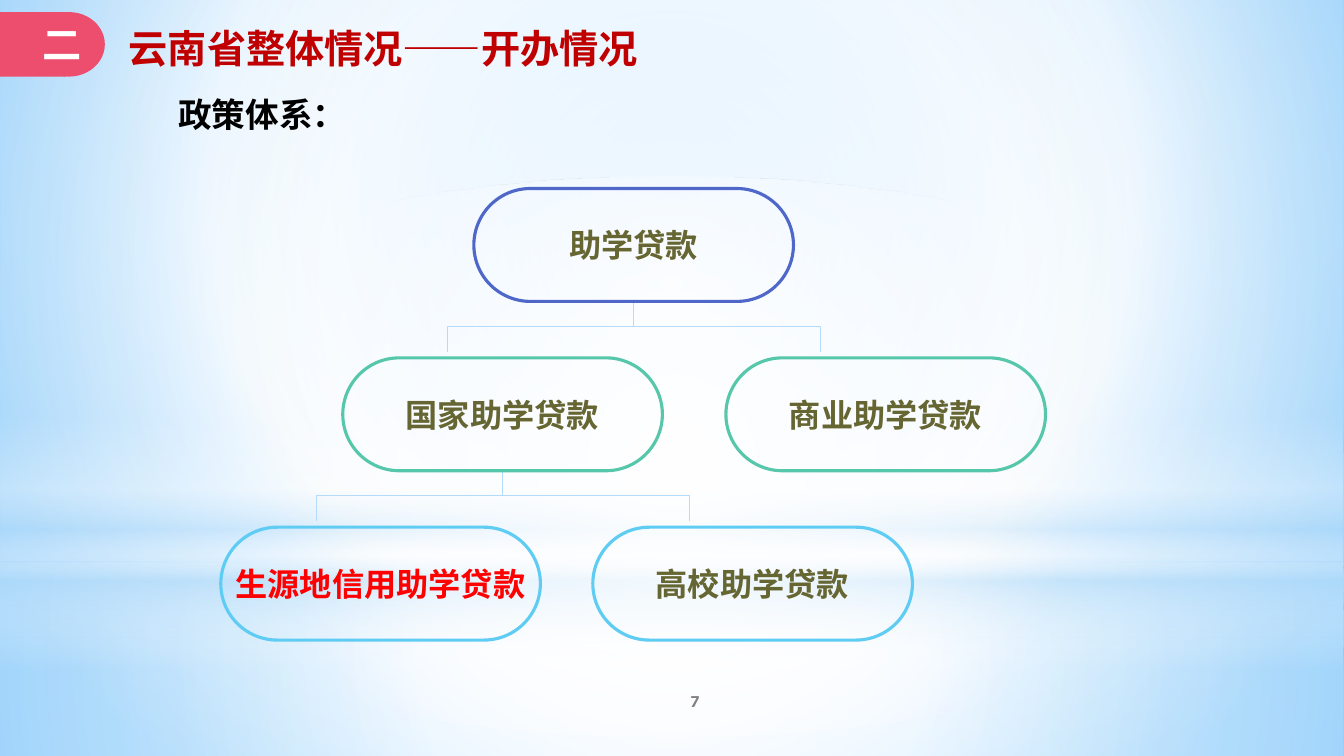
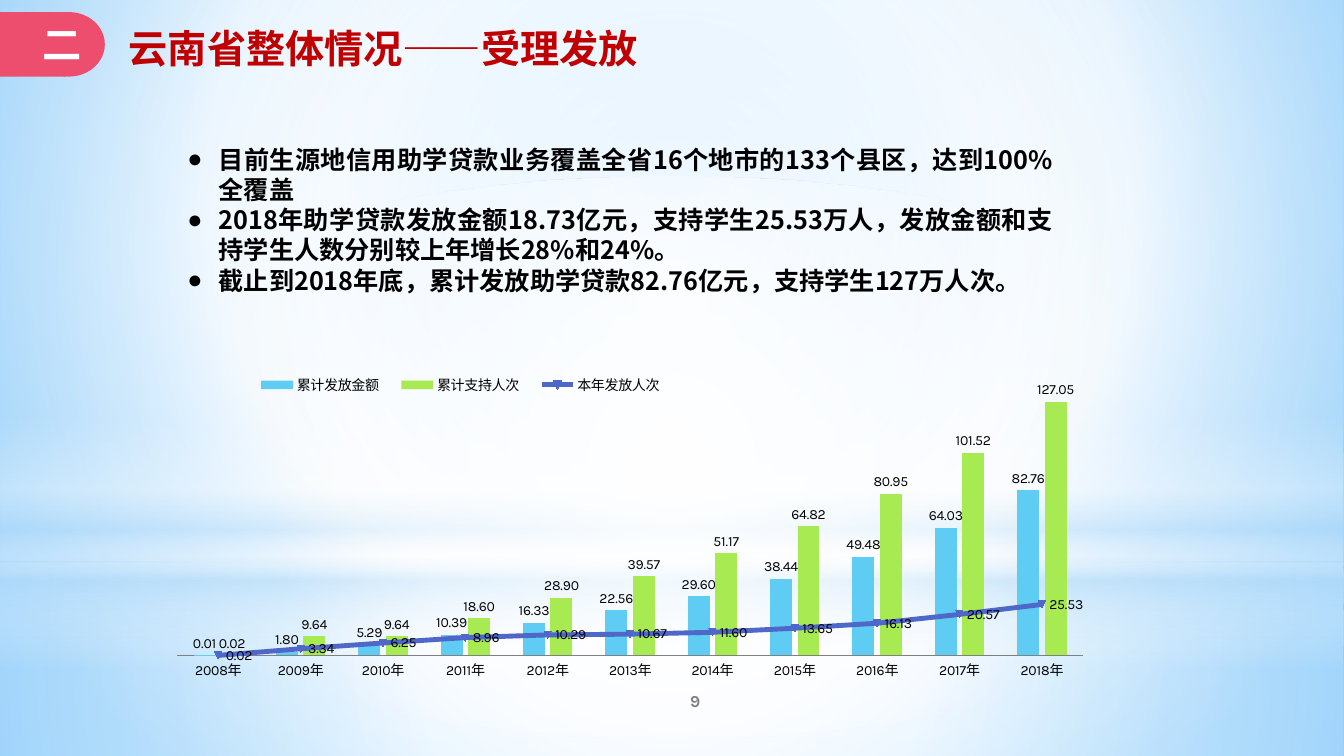
"""Build two slides on student loans in Yunnan: the policy tree and the yearly lending chart."""
import pptx
import pptx.chart.data
import pptx.dml.color
import pptx.enum.chart
import pptx.enum.shapes
import pptx.enum.text
import pptx.oxml
import pptx.oxml.ns
import pptx.util
from lxml import etree

Inches, Pt = pptx.util.Inches, pptx.util.Pt
RGBColor = pptx.dml.color.RGBColor
qn = pptx.oxml.ns.qn
SHAPE = pptx.enum.shapes.MSO_SHAPE
ALIGN = pptx.enum.text.PP_ALIGN
MIDDLE = pptx.enum.text.MSO_ANCHOR.MIDDLE
LABEL = pptx.enum.chart.XL_LABEL_POSITION

CJK = "Noto Sans CJK SC"
COLORS = {
    "white": "FFFFFF", "black": "000000", "grey": "808080", "mist": "B4DCFA",
    "sky": "9ED5FF", "deep_sky": "5BB9FF", "badge": "ED4E6E", "title": "C00000",
    "olive": "666633", "red": "FF0000", "indigo": "4E67C8", "teal": "56C7AA",
    "cyan": "5ECCF3", "lime": "A7EA52",
}
RGB = {name: RGBColor.from_string(value) for name, value in COLORS.items()}


def paint_gradient(holder, element, stops, focus=None):
    """Fill with (position, colour, opacity) stops, around a focus or from top to bottom."""
    holder.fill.gradient()
    gradient = element.find(".//" + qn("a:gradFill"))
    for child in list(gradient):
        gradient.remove(child)
    stop_list = etree.SubElement(gradient, qn("a:gsLst"))
    for position, color, opacity in stops:
        stop = etree.SubElement(stop_list, qn("a:gs"), pos=str(position * 1000))
        tint = etree.SubElement(stop, qn("a:srgbClr"), val=COLORS[color])
        if opacity < 100:
            etree.SubElement(tint, qn("a:alpha"), val=str(opacity * 1000))
    if focus:
        circle = etree.SubElement(gradient, qn("a:path"))
        circle.set("path", "circle")
        edges = {side: str(value * 1000) for side, value in zip("ltrb", focus)}
        etree.SubElement(circle, qn("a:fillToRect"), edges)
    else:
        etree.SubElement(gradient, qn("a:lin"), ang="5400000", scaled="0")


def write_text(frame, lines, size, color, font=CJK, align=ALIGN.LEFT, wrap=True):
    """Write bold paragraphs in one format and return them."""
    frame.word_wrap = wrap
    look = {"size": Pt(size), "bold": True, "name": font}
    for number, line in enumerate(lines):
        paragraph = frame.add_paragraph() if number else frame.paragraphs[0]
        paragraph.alignment = align
        run = paragraph.add_run()
        run.text = line
        for attribute, value in look.items():
            setattr(run.font, attribute, value)
        run.font.color.rgb = RGB[color]
        etree.SubElement(run.font._element, qn("a:ea"), typeface=CJK)
    return frame.paragraphs


CENTER = (50, 50, 50, 50)
BACKDROP = [(0, "sky", 100), (60, "white", 100), (100, "deep_sky", 100)]
GLOWS = [
    (SHAPE.RECTANGLE, 5.58, 1.92,
     [(0, "white", 91), (37, "white", 76), (100, "mist", 79)], CENTER),
    (SHAPE.RECTANGLE, 0, 5.58,
     [(0, "white", 89), (48, "white", 62), (100, "mist", 79)], CENTER),
    (SHAPE.RECTANGLE, 4.12, 2.5,
     [(0, "white", 0), (29, "white", 30), (45, "mist", 40),
      (55, "white", 26), (65, "mist", 60), (100, "white", 0)], None),
    (SHAPE.OVAL, 1.75, 5.58, [(0, "white", 100), (56, "white", 0)], CENTER),
]
BADGE = [(SHAPE.RECTANGLE, -0.01, 0.67), (SHAPE.OVAL, 0.33, 0.71)]

prs = pptx.Presentation()
prs.slide_width, prs.slide_height = Inches(13.33), Inches(7.5)
slides = []
for title, page in [("云南省整体情况——开办情况", "7"), ("云南省整体情况——受理发放", "9")]:
    slide = prs.slides.add_slide(prs.slide_layouts[6])
    slides.append(slide)
    paint_gradient(slide.background, slide._element, BACKDROP, (20, 10, 20, 60))
    for outline, top, height, stops, focus in GLOWS:
        glow = slide.shapes.add_shape(outline, 0, Inches(top), Inches(13.33), Inches(height))
        glow.shadow.inherit = False
        glow.line.fill.background()
        paint_gradient(glow, glow._element, stops, focus)
    for outline, left, width in BADGE:
        badge = slide.shapes.add_shape(
            outline, Inches(left), Inches(0.12), Inches(width), Inches(0.64))
        badge.shadow.inherit = False
        badge.fill.solid()
        badge.fill.fore_color.rgb = RGB["badge"]
        badge.line.fill.background()
    section = slide.shapes.add_textbox(Inches(0.32), Inches(0.15), Inches(0.59), Inches(0.57))
    write_text(section.text_frame, ["二"], 28, "white", wrap=False)
    heading = slide.shapes.add_textbox(Inches(1.18), Inches(0.19), Inches(5.93), Inches(0.57))
    write_text(heading.text_frame, [title], 28, "title")
    footer = slide.shapes.add_textbox(Inches(5.56), Inches(6.75), Inches(2.67), Inches(0.4))
    footer.text_frame.vertical_anchor = MIDDLE
    write_text(footer.text_frame, [page], 12, "grey", "Karla", ALIGN.CENTER)

policy, lending = slides

subtitle = policy.shapes.add_textbox(Inches(1.67), Inches(0.8), Inches(9.33), Inches(0.7))
write_text(subtitle.text_frame, ["政策体系："], 24, "black")[0].line_spacing = 1.2

LOAN_WIDTH, LOAN_HEIGHT, LEVEL_TOP, LEVEL_STEP = 3.17, 1.12, 1.87, 1.68
DROP, BRANCH_SPAN = 0.5, 1.85
for parent_level, parent_left in enumerate([4.7, 3.4]):
    parent_x = parent_left + LOAN_WIDTH / 2
    drop_middle = LEVEL_TOP + parent_level * LEVEL_STEP + LOAN_HEIGHT + DROP / 2
    for side, turn in [(-1, 270), (1, 90)]:
        middle_x = parent_x + side * BRANCH_SPAN / 2
        branch = policy.shapes.add_connector(
            pptx.enum.shapes.MSO_CONNECTOR.ELBOW,
            Inches(middle_x + side * DROP / 2), Inches(drop_middle - BRANCH_SPAN / 2),
            Inches(middle_x - side * DROP / 2), Inches(drop_middle + BRANCH_SPAN / 2))
        branch._element.spPr.find(qn("a:xfrm")).set("rot", str(turn * 60000))
        branch.line.color.rgb = RGB["mist"]
        branch.line.width = Pt(0.75)
        etree.SubElement(branch._element.spPr, qn("a:effectLst"))

LOANS = [
    (0, 4.7, "助学贷款", "indigo", "olive"),
    (1, 3.4, "国家助学贷款", "teal", "olive"),
    (1, 7.2, "商业助学贷款", "teal", "olive"),
    (2, 2.19, "生源地信用助学贷款", "cyan", "red"),
    (2, 5.88, "高校助学贷款", "cyan", "olive"),
]
for level, left, name, edge, ink in LOANS:
    loan = policy.shapes.add_shape(
        SHAPE.ROUNDED_RECTANGLE, Inches(left), Inches(LEVEL_TOP + level * LEVEL_STEP),
        Inches(LOAN_WIDTH), Inches(LOAN_HEIGHT))
    loan.adjustments[0] = 0.5
    loan.shadow.inherit = False
    loan.fill.background()
    loan.line.color.rgb = RGB[edge]
    loan.line.width = Pt(2.25)
    frame = loan.text_frame
    frame.vertical_anchor = MIDDLE
    for margin in ("left", "top", "right", "bottom"):
        setattr(frame, "margin_" + margin, 0)
    write_text(frame, [name], 23, ink, "Arial", ALIGN.CENTER, wrap=False)

FACTS = [
    "目前生源地信用助学贷款业务覆盖全省16个地市的133个县区，达到100%全覆盖",
    "2018年助学贷款发放金额18.73亿元，支持学生25.53万人，发放金额和支持学生人数分别较上年增长28%和24%。",
    "截止到2018年底，累计发放助学贷款82.76亿元，支持学生127万人次。",
]
facts = lending.shapes.add_textbox(Inches(1.76), Inches(1.38), Inches(8.78), Inches(1.9))
for fact in write_text(facts.text_frame, FACTS, 18, "black", align=ALIGN.JUSTIFY):
    fact.line_spacing = Pt(21.6)
    indent = fact._p.get_or_add_pPr()
    indent.set("marL", str(Inches(0.31)))
    indent.set("indent", str(-Inches(0.31)))
    etree.SubElement(indent, qn("a:buFont"), typeface="Arial")
    etree.SubElement(indent, qn("a:buChar"), char="●")

SERIES = [
    ("累计发放金额", "cyan",
     [0.01, 1.8, 5.29, 10.39, 16.33, 22.56, 29.6, 38.44, 49.48, 64.03, 82.76]),
    ("累计支持人次", "lime",
     [0.02, 9.64, 9.64, 18.6, 28.9, 39.57, 51.17, 64.82, 80.95, 101.52, 127.05]),
    ("本年发放人次", "indigo",
     [0.02, 3.34, 6.25, 8.96, 10.29, 10.67, 11.6, 13.65, 16.13, 20.57, 25.53]),
]
figures = pptx.chart.data.CategoryChartData(number_format="0.00")
figures.categories = [f"{year}年" for year in range(2008, 2019)]
for name, color, values in SERIES:
    figures.add_series(name, values)
chart = lending.shapes.add_chart(
    pptx.enum.chart.XL_CHART_TYPE.COLUMN_CLUSTERED,
    Inches(1.57), Inches(3.31), Inches(9.36), Inches(3.51), figures).chart
chart.has_title = False
chart.font.size, chart.font.name = Pt(10), "Karla"
chart.font.color.rgb = RGB["black"]

bars = chart._chartSpace.find(".//" + qn("c:barChart"))
line_chart = pptx.oxml.parse_xml(
    f'<c:lineChart {pptx.oxml.ns.nsdecls("c")}><c:grouping val="standard"/>'
    '<c:varyColors val="0"/><c:marker val="1"/></c:lineChart>')
yearly = bars.findall(qn("c:ser"))[2]
for bar_only in yearly.findall(qn("c:invertIfNegative")):
    yearly.remove(bar_only)
line_chart.insert(2, yearly)
for axis in bars.findall(qn("c:axId")):
    etree.SubElement(line_chart, qn("c:axId"), val=axis.get("val"))
bars.addnext(line_chart)

columns, trend = chart.plots
columns.vary_by_categories = False
columns.gap_width, columns.overlap = 150, -25
for series, (name, color, values) in zip([*columns.series, *trend.series], SERIES):
    is_trend = color == "indigo"
    labels = series.data_labels
    label_format = {
        "show_value": True, "number_format": "0.00", "number_format_is_linked": False,
        "position": LABEL.RIGHT if is_trend else LABEL.OUTSIDE_END,
    }
    for attribute, value in label_format.items():
        setattr(labels, attribute, value)
    fill = series.marker.format.fill if is_trend else series.format.fill
    fill.solid()
    fill.fore_color.rgb = RGB[color]
    if is_trend:
        series.smooth = False
        series.format.line.color.rgb = RGB[color]
        series.format.line.width = Pt(3.5)
        series.marker.format.line.color.rgb = RGB[color]

amounts, years = chart.value_axis, chart.category_axis
amounts.visible = amounts.has_major_gridlines = False
amounts.minimum_scale, amounts.maximum_scale = 0, 140
years.major_tick_mark = pptx.enum.chart.XL_TICK_MARK.NONE
years.format.line.color.rgb = RGB["grey"]
chart.has_legend = True
chart.legend.position = pptx.enum.chart.XL_LEGEND_POSITION.TOP
chart.legend.include_in_layout = True

plot_area = chart._chartSpace.find(".//" + qn("c:plotArea"))
PLACES = [(plot_area, 0, "inner", (0.02, 0.12, 0.96, 0.79)),
          (chart.legend._element, 1, None, (0.09, 0.11, 0.46, 0.07))]
for part, position, target, place in PLACES:
    for automatic in part.findall(qn("c:layout")):
        part.remove(automatic)
    layout = etree.Element(qn("c:layout"))
    manual = etree.SubElement(layout, qn("c:manualLayout"))
    if target:
        etree.SubElement(manual, qn("c:layoutTarget"), val=target)
    for tag in ("xMode", "yMode"):
        etree.SubElement(manual, qn("c:" + tag), val="edge")
    for tag, value in zip("xywh", place):
        etree.SubElement(manual, qn("c:" + tag), val=str(value))
    part.insert(position, layout)

prs.save("out.pptx")
